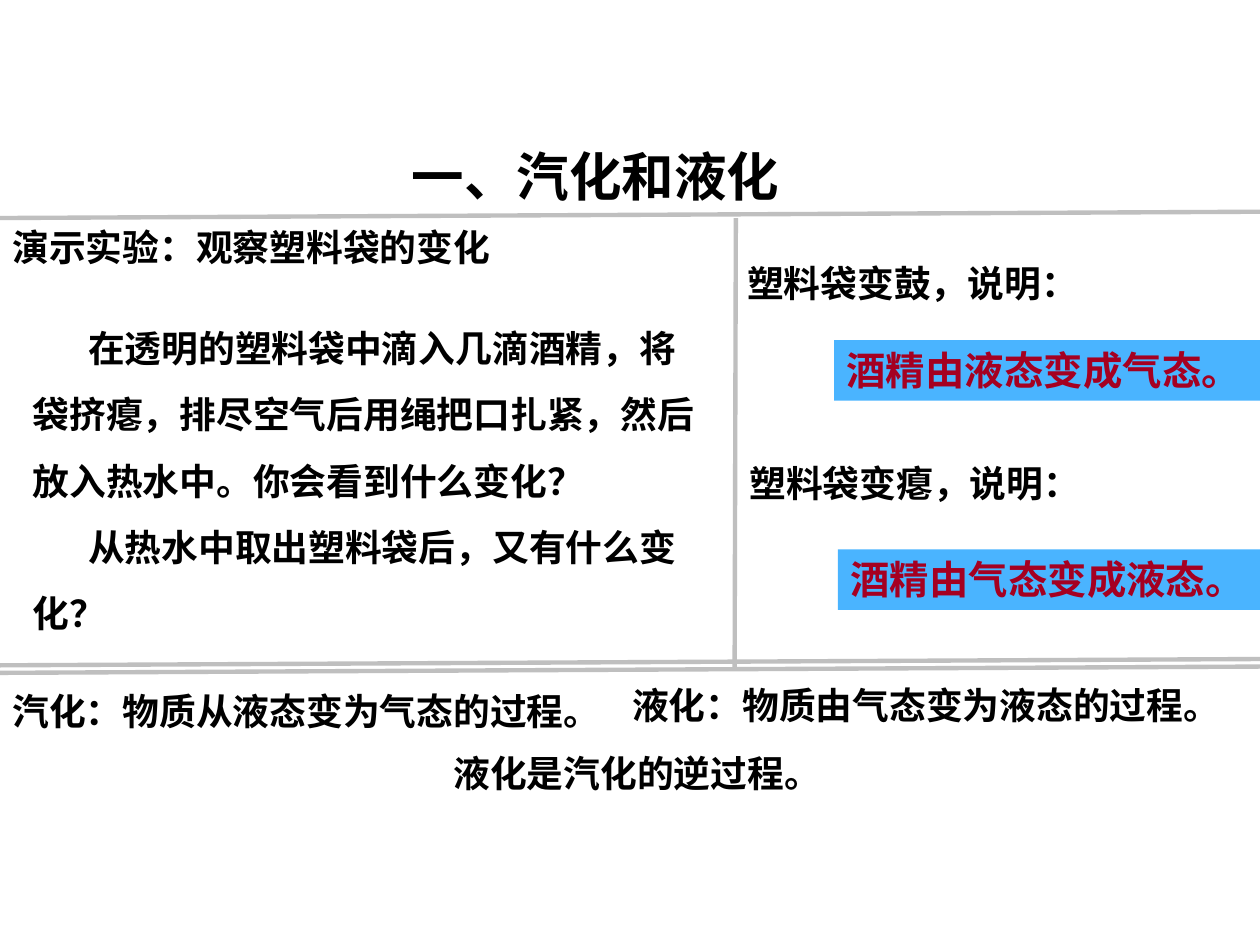
import pptx
import pptx.dml.color
import pptx.enum.shapes
import pptx.enum.text
import pptx.oxml.ns
import pptx.util
import lxml.etree

Pt = pptx.util.Pt
COLORS = {"text": "000000", "answer": "A50021", "highlight": "4AB4FF", "rule": "BFBFBF"}


class LessonSlide:
    font = "Arial"
    body_size = 21
    answer_size = 22.5
    rule_width = 2.5

    def __init__(self, deck):
        self.page = deck.slides.add_slide(deck.slide_layouts[6])

    def color(self, name):
        return pptx.dml.color.RGBColor.from_string(COLORS[name])

    def fill_text(self, box, paragraphs, size, color="text", wrap=False, middle=False,
                  indent=0, spacing=None):
        frame = box.text_frame
        frame.word_wrap = wrap
        frame.auto_size = pptx.enum.text.MSO_AUTO_SIZE.SHAPE_TO_FIT_TEXT
        anchor = pptx.enum.text.MSO_ANCHOR
        frame.vertical_anchor = anchor.MIDDLE if middle else anchor.TOP
        for number, content in enumerate(paragraphs):
            para = frame.add_paragraph() if number else frame.paragraphs[0]
            para.alignment = pptx.enum.text.PP_ALIGN.LEFT
            if spacing:
                para.line_spacing = spacing
            if indent:
                properties = para._p.get_or_add_pPr()
                properties.set("marL", "0")
                properties.set("indent", str(Pt(indent)))
            span = para.add_run()
            span.text = content
            span.font.name = self.font
            span.font.size = Pt(size)
            span.font.bold = True
            span.font.color.rgb = self.color(color)

    def text(self, left, top, width, height, *paragraphs, size=body_size, **style):
        box = self.page.shapes.add_textbox(Pt(left), Pt(top), Pt(width), Pt(height))
        self.fill_text(box, paragraphs, size, **style)

    def answer(self, left, top, content):
        box = self.page.shapes.add_shape(pptx.enum.shapes.MSO_SHAPE.RECTANGLE,
                                         Pt(left), Pt(top), Pt(243.4), Pt(34.6))
        box.shadow.inherit = False
        box.fill.solid()
        box.fill.fore_color.rgb = self.color("highlight")
        box.line.fill.background()
        self.fill_text(box, [content], self.answer_size, "answer")

    def rule(self, x1, y1, x2, y2):
        line = self.page.shapes.add_connector(pptx.enum.shapes.MSO_CONNECTOR.STRAIGHT,
                                              Pt(x1), Pt(y1), Pt(x2), Pt(y2))
        line.line.color.rgb = self.color("rule")
        line.line.width = Pt(self.rule_width)
        lxml.etree.SubElement(line._element.spPr, pptx.oxml.ns.qn("a:effectLst"))


def main():
    deck = pptx.Presentation()
    deck.slide_width, deck.slide_height = Pt(720), Pt(540)
    slide = LessonSlide(deck)

    # Title
    slide.text(228.2, 78.5, 227.5, 43.9, "一、汽化和液化", size=30, middle=True)

    # Experiment
    slide.text(11.5, 169.2, 397.4, 198,
               "在透明的塑料袋中滴入几滴酒精，将袋挤瘪，排尽空气后用绳把口扎紧，然后放入热水中。你会看到什么变化？",
               "从热水中取出塑料袋后，又有什么变化？",
               wrap=True, middle=True, indent=31.7, spacing=1.5)
    slide.text(0, 124.6, 291.6, 32.4, "演示实验：观察塑料袋的变化")

    # Highlighted answers
    slide.answer(476.6, 194.4, "酒精由液态变成气态。")
    slide.answer(478.8, 313.9, "酒精由气态变成液态。")

    # Definitions
    slide.text(0, 390.2, 355.7, 32.4, "汽化：物质从液态变为气态的过程。")
    slide.text(354.2, 386.6, 355.7, 32.4, "液化：物质由气态变为液态的过程。")
    slide.text(252, 425.5, 227.5, 32.4, "液化是汽化的逆过程。")

    # Slightly slanted rules across the page, and the column divider
    for left_end in (124.6, 380.2, 384.5):
        slide.rule(0, left_end, 720, left_end - 3.6)
    slide.rule(420.5, 124.6, 419.8, 381.6)

    # Observations
    slide.text(419.8, 145.4, 187.9, 32.4, "塑料袋变鼓，说明：", wrap=True)
    slide.text(421.2, 259.9, 206.6, 32.4, "塑料袋变瘪，说明：")

    deck.save("out.pptx")


if __name__ == "__main__":
    main()
